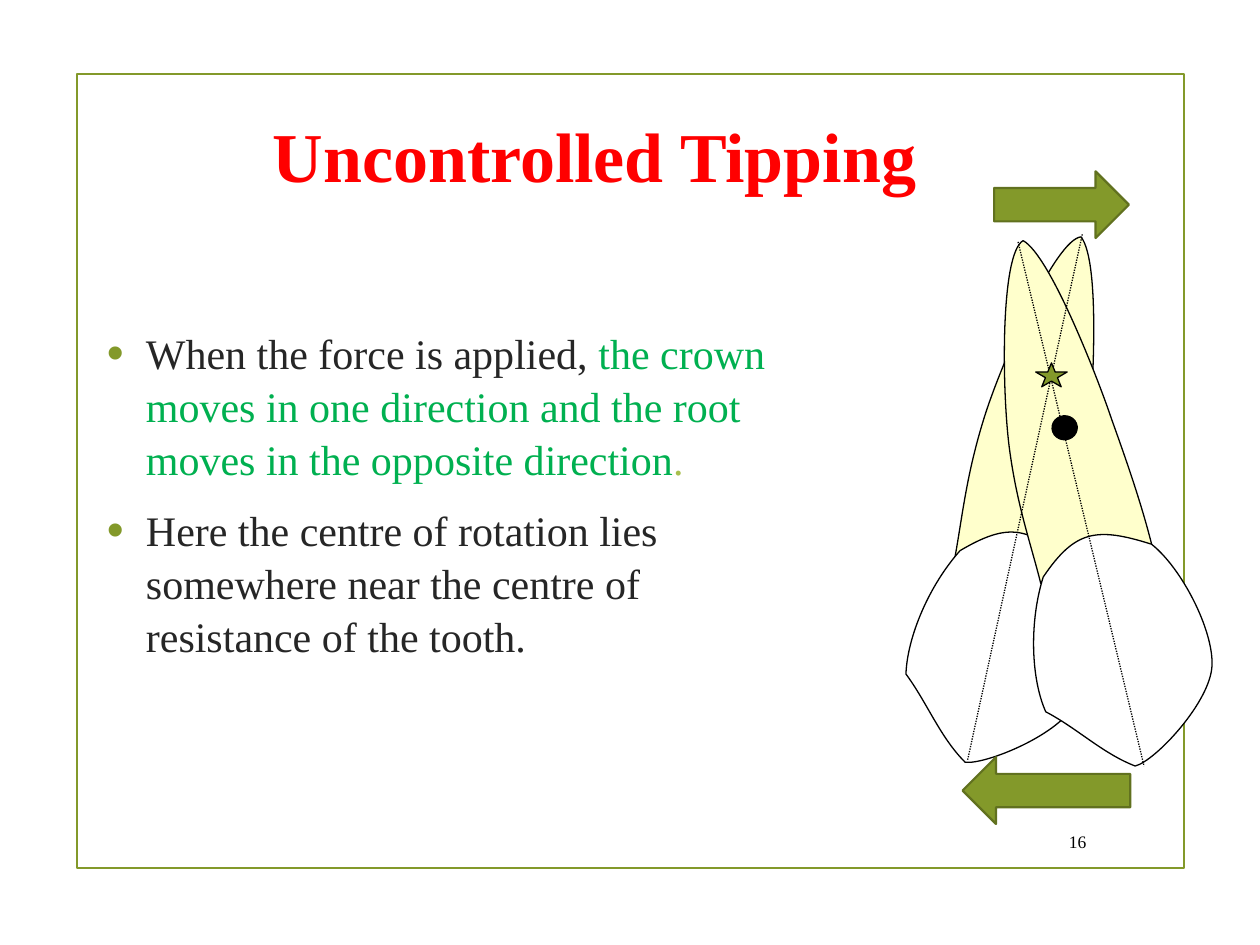
from dataclasses import dataclass

from lxml import etree
from pptx import Presentation
from pptx.dml.color import RGBColor
from pptx.enum.dml import MSO_LINE
from pptx.enum.shapes import MSO_CONNECTOR, MSO_SHAPE
from pptx.enum.text import MSO_ANCHOR, PP_ALIGN
from pptx.oxml.ns import qn
from pptx.util import Inches, Pt

RECT, OVAL, STAR = MSO_SHAPE.RECTANGLE, MSO_SHAPE.OVAL, MSO_SHAPE.STAR_5_POINT
LEFT_ARROW, RIGHT_ARROW = MSO_SHAPE.LEFT_ARROW, MSO_SHAPE.RIGHT_ARROW
STRAIGHT = MSO_CONNECTOR.STRAIGHT
DOTTED = MSO_LINE.ROUND_DOT
LEFT, RIGHT = PP_ALIGN.LEFT, PP_ALIGN.RIGHT
TOP, MIDDLE = MSO_ANCHOR.TOP, MSO_ANCHOR.MIDDLE

Point = tuple[float, float]
Box = tuple[float, float, float, float]
Run = tuple[str, str]


@dataclass(frozen=True)
class Theme:
    font: str = "Times New Roman"
    title: str = "FF0000"
    text: str = "262626"
    stress: str = "00B050"
    stop: str = "A8BF4D"
    accent: str = "83992A"
    arrow_edge: str = "61711F"
    root: str = "FFFFCC"
    crown: str = "FFFFFF"
    ink: str = "000000"
    title_size: float = 40
    body_size: float = 24
    number_size: float = 10
    thin: float = 0.75
    thick: float = 1.25


@dataclass(frozen=True)
class Tooth:
    root: list[Point]
    crown: list[Point]
    centre: Box
    tilt: float
    axis: tuple[Point, Point]


@dataclass(frozen=True)
class Marker:
    kind: int
    box: Box
    edge: str
    weight: float


THEME = Theme()

BACK_TOOTH = Tooth(
    root=[(7.81, 3.32), (7.67, 3.77), (7.64, 4.09), (7.58, 4.42),
          (7.94, 4.21), (8.13, 4.13), (8.51, 4.53),
          (8.58, 4.17), (8.61, 3.75), (8.64, 3.46),
          (8.67, 3.17), (8.74, 2.08), (8.58, 1.88),
          (8.38, 1.9), (7.95, 2.87), (7.81, 3.32)],
    crown=[(7.62, 4.37), (7.37, 4.65), (7.2, 5.06), (7.19, 5.35),
           (7.36, 5.58), (7.46, 5.85), (7.66, 6.05),
           (7.82, 6.07), (8.42, 5.83), (8.54, 5.57),
           (8.67, 5.32), (8.65, 4.77), (8.51, 4.49),
           (8.17, 4.18), (8.01, 4.14), (7.62, 4.37)],
    centre=(8.17, 3.28, 0.2, 0.19), tilt=19.2,
    axis=((8.59, 1.86), (7.68, 6.03)))

FRONT_TOOTH = Tooth(
    root=[(8.01, 3.55), (8.07, 4.01), (8.18, 4.31), (8.26, 4.63),
          (8.5, 4.29), (8.64, 4.14), (9.15, 4.36),
          (9.06, 3.99), (8.92, 3.6), (8.82, 3.32),
          (8.73, 3.05), (8.34, 2.03), (8.12, 1.91),
          (7.94, 2.01), (7.95, 3.08), (8.01, 3.55)],
    crown=[(8.28, 4.58), (8.17, 4.93), (8.18, 5.38), (8.3, 5.65),
           (8.55, 5.78), (8.75, 5.98), (9.01, 6.08),
           (9.17, 6.04), (9.61, 5.57), (9.62, 5.28),
           (9.63, 5), (9.38, 4.51), (9.14, 4.32),
           (8.7, 4.18), (8.53, 4.21), (8.28, 4.58)],
    centre=(8.35, 3.3, 0.2, 0.19), tilt=354.6,
    axis=((8.08, 1.92), (9.08, 6.08)))

TEETH = [BACK_TOOTH, FRONT_TOOTH]

MARKERS = [
    Marker(STAR, (8.22, 2.88, 0.25, 0.19), THEME.ink, THEME.thin),
    Marker(LEFT_ARROW, (7.64, 6.01, 1.33, 0.53), THEME.arrow_edge, THEME.thick),
    Marker(RIGHT_ARROW, (7.89, 1.36, 1.07, 0.53), THEME.arrow_edge, THEME.thick),
]

BODY: list[list[Run]] = [
    [("When the force is applied, ", THEME.text),
     ("the crown moves in one direction and the root moves in the opposite direction",
      THEME.stress),
     (".", THEME.stop)],
    [("Here the centre of rotation lies somewhere near the centre of "
      "resistance of the tooth.", THEME.text)],
]


def rgb(value: str) -> RGBColor:
    return RGBColor.from_string(value)


def paint(sp, fill: str | None, edge: str, weight: float) -> None:
    sp.shadow.inherit = False
    if fill:
        sp.fill.solid()
        sp.fill.fore_color.rgb = rgb(fill)
    else:
        sp.fill.background()
    sp.line.color.rgb = rgb(edge)
    sp.line.width = Pt(weight)


def add_preset(slide, kind: int, box: Box, fill: str | None, edge: str,
               weight: float, tilt: float = 0) -> None:
    sp = slide.shapes.add_shape(kind, *map(Inches, box))
    sp.rotation = tilt
    paint(sp, fill, edge, weight)


def add_curve(slide, points: list[Point], fill: str) -> None:
    start, *rest = [(Inches(x), Inches(y)) for x, y in points]
    builder = slide.shapes.build_freeform(*start)
    builder.add_line_segments(rest, close=True)
    sp = builder.convert_to_shape()
    outline = next(sp.element.iter(qn("a:path")))
    lines = outline.findall(qn("a:lnTo"))
    for i in range(0, len(lines), 3):
        curve = etree.Element(qn("a:cubicBezTo"))
        lines[i].addprevious(curve)
        for line in lines[i:i + 3]:
            curve.append(line[0])
            outline.remove(line)
    paint(sp, fill, THEME.ink, THEME.thin)


def add_axis(slide, start: Point, end: Point) -> None:
    c = slide.shapes.add_connector(STRAIGHT, *map(Inches, (*start, *end)))
    c.line.color.rgb = rgb(THEME.ink)
    c.line.width = Pt(THEME.thin)
    c.line.dash_style = DOTTED
    etree.SubElement(c.element.spPr, qn("a:effectLst"))


def add_tooth(slide, tooth: Tooth) -> None:
    add_curve(slide, tooth.root, THEME.root)
    add_curve(slide, tooth.crown, THEME.crown)
    add_preset(slide, OVAL, tooth.centre, THEME.ink, THEME.ink, THEME.thin, tooth.tilt)


def add_bullet(p) -> None:
    pPr = p._p.get_or_add_pPr()
    pPr.set("marL", str(Inches(0.31)))
    pPr.set("indent", str(-Inches(0.31)))
    color = etree.SubElement(pPr, qn("a:buClr"))
    etree.SubElement(color, qn("a:srgbClr"), val=THEME.accent)
    etree.SubElement(pPr, qn("a:buSzPct"), val="115000")
    etree.SubElement(pPr, qn("a:buFont"), typeface="Arial")
    etree.SubElement(pPr, qn("a:buChar"), char="•")


def write_text(sp, box: Box, paragraphs: list[list[Run]], *, size: float,
               bold: bool = False, align=LEFT, anchor=TOP, bullets: bool = False,
               line_spacing: float = 1.0, before: float = 0, after: float = 0) -> None:
    sp.left, sp.top, sp.width, sp.height = map(Inches, box)
    tf = sp.text_frame
    tf.word_wrap = True
    tf.vertical_anchor = anchor
    for i, runs in enumerate(paragraphs):
        p = tf.add_paragraph() if i else tf.paragraphs[0]
        if bullets:
            add_bullet(p)
        p.alignment = align
        p.line_spacing = line_spacing
        p.space_before = Pt(before if i else 0)
        p.space_after = Pt(after)
        for text, color in runs:
            r = p.add_run()
            r.text = text
            r.font.name = THEME.font
            r.font.size = Pt(size)
            r.font.bold = bold
            r.font.color.rgb = rgb(color)


def main() -> None:
    prs = Presentation()
    prs.slide_width, prs.slide_height = Inches(10), Inches(7.5)
    slide = prs.slides.add_slide(prs.slide_layouts[5])

    add_preset(slide, RECT, (0.61, 0.59, 8.79, 6.3), None, THEME.accent, THEME.thick)
    write_text(slide.shapes.title, (1.69, 0.6, 5.68, 1.25),
               [[("Uncontrolled Tipping", THEME.title)]],
               size=THEME.title_size, bold=True, align=RIGHT, anchor=MIDDLE)
    body = slide.shapes.add_textbox(0, 0, 0, 0)
    write_text(body, (0.75, 2.53, 5.79, 4.13), BODY, size=THEME.body_size,
               bullets=True, line_spacing=1.05, before=4.8, after=6)

    for tooth in TEETH:
        add_tooth(slide, tooth)
    for tooth in reversed(TEETH):
        add_axis(slide, *tooth.axis)
    for m in MARKERS:
        add_preset(slide, m.kind, m.box, THEME.accent, m.edge, m.weight)

    number = slide.shapes.add_textbox(0, 0, 0, 0)
    write_text(number, (8.29, 6.52, 0.43, 0.31), [[("16", THEME.ink)]],
               size=THEME.number_size, align=RIGHT, anchor=MIDDLE)
    prs.save("out.pptx")


if __name__ == "__main__":
    main()
